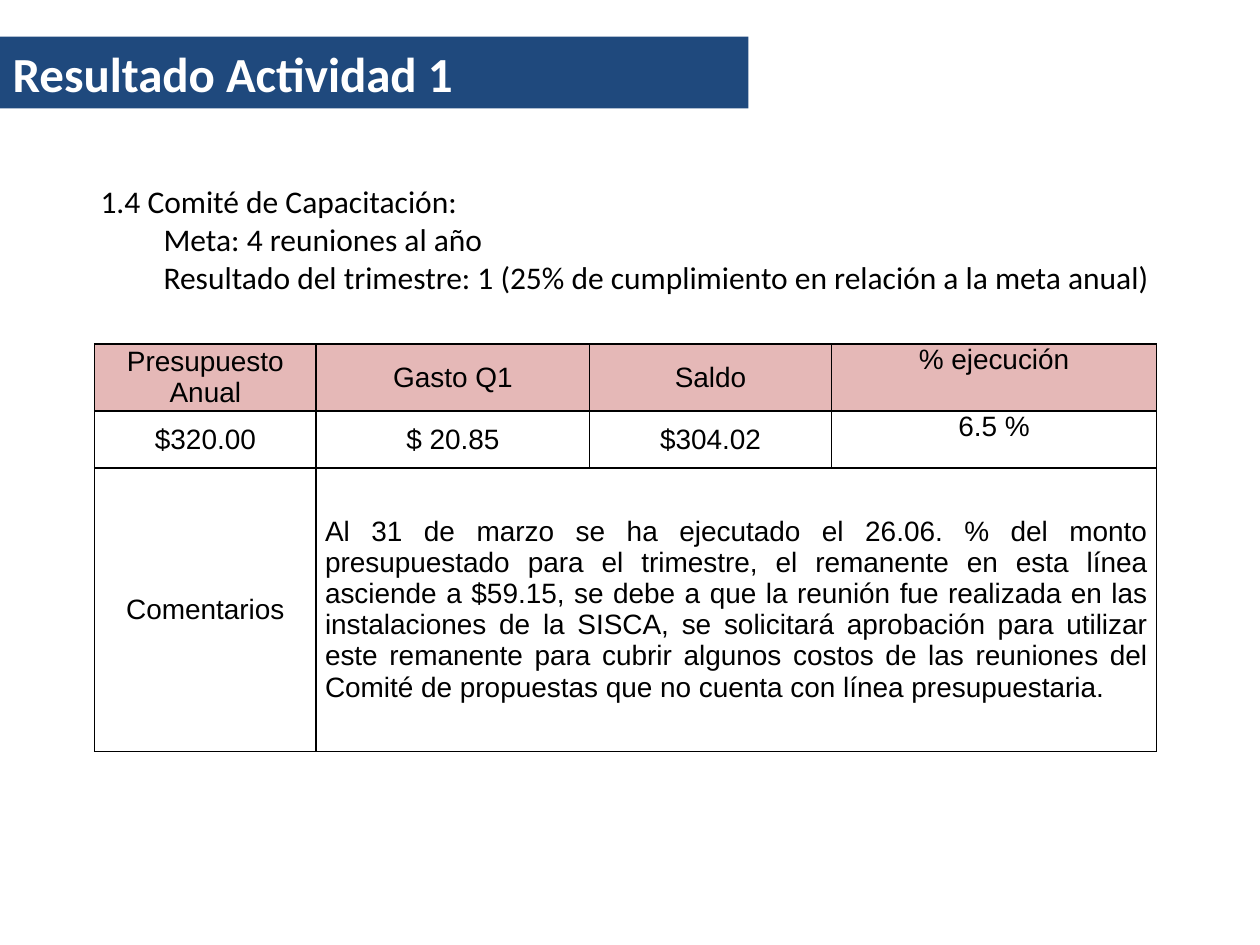
from lxml.etree import SubElement
from pptx import Presentation
from pptx.dml.color import RGBColor
from pptx.enum.text import MSO_ANCHOR, MSO_AUTO_SIZE, PP_ALIGN
from pptx.oxml.ns import qn
from pptx.util import Inches, Pt

COLORS = {"banner": "1F497D", "header": "E5B8B7", "ink": "000000", "paper": "FFFFFF"}
GRID_COLUMNS, GRID_ROWS = 100, 75
COLUMN_WIDTHS = [17.6, 21.7, 19.2, 25.8]
ROW_HEIGHTS = [5.3, 4.5, 22.5]

GOAL_LINES = [
    ("1.4 Comité de Capacitación:", 0.5),
    ("Meta: 4 reuniones al año", 1),
    ("Resultado del trimestre: 1 (25% de cumplimiento en relación a la meta anual)", 1),
]
COMMENT = (
    "Al 31 de marzo se ha ejecutado el 26.06. % del monto presupuestado para el trimestre, "
    "el remanente en esta línea asciende a $59.15, se debe a que la reunión fue realizada en "
    "las instalaciones de la SISCA, se solicitará aprobación para utilizar este remanente para "
    "cubrir algunos costos de las reuniones del Comité de propuestas que no cuenta con línea "
    "presupuestaria."
)
BUDGET = [
    ["Presupuesto Anual", "Gasto Q1", "Saldo", "% ejecución"],
    ["$320.00", "$ 20.85", "$304.02", "6.5 %"],
    ["Comentarios", COMMENT, "", ""],
]


def write(paragraph, text, font="Calibri", size=18, color="ink", bold=False,
          align=PP_ALIGN.LEFT, margin=0):
    paragraph.alignment = align
    if margin:
        properties = paragraph._p.get_or_add_pPr()
        properties.set("marL", str(Inches(margin)))
        properties.set("indent", "0")
    run = paragraph.add_run()
    run.text = text
    run.font.name = font
    run.font.size = Pt(size)
    run.font.bold = bold
    run.font.color.rgb = RGBColor.from_string(COLORS[color])


class SlideBuilder:
    def __init__(self, presentation):
        self.column = presentation.slide_width / GRID_COLUMNS
        self.row = presentation.slide_height / GRID_ROWS
        self.slide = presentation.slides.add_slide(presentation.slide_layouts[5])

    def place(self, left, top, width, height):
        return (round(left * self.column), round(top * self.row),
                round(width * self.column), round(height * self.row))

    def banner(self, text, *area):
        title = self.slide.shapes.title
        title.left, title.top, title.width, title.height = self.place(*area)
        title.fill.solid()
        title.fill.fore_color.rgb = RGBColor.from_string(COLORS["banner"])
        frame = title.text_frame
        frame.auto_size = MSO_AUTO_SIZE.NONE
        frame.vertical_anchor = MSO_ANCHOR.MIDDLE
        write(frame.paragraphs[0], text, size=28, color="paper", bold=True)

    def lines(self, entries, *area):
        frame = self.slide.shapes.add_textbox(*self.place(*area)).text_frame
        frame.word_wrap = True
        frame.vertical_anchor = MSO_ANCHOR.MIDDLE
        for number, (text, margin) in enumerate(entries):
            paragraph = frame.add_paragraph() if number else frame.paragraphs[0]
            write(paragraph, text, margin=margin)

    def border(self, cell):
        properties = cell._tc.get_or_add_tcPr()
        for side in ("lnL", "lnR", "lnT", "lnB"):
            edge = SubElement(properties, qn(f"a:{side}"), w=str(Pt(1)))
            paint = SubElement(edge, qn("a:solidFill"))
            SubElement(paint, qn("a:srgbClr"), val=COLORS["ink"])

    def table(self, values, left, top):
        area = self.place(left, top, sum(COLUMN_WIDTHS), sum(ROW_HEIGHTS))
        table = self.slide.shapes.add_table(len(values), len(values[0]), *area).table
        table.first_row = table.horz_banding = False
        for column, width in zip(table.columns, COLUMN_WIDTHS):
            column.width = round(width * self.column)
        for row, height in zip(table.rows, ROW_HEIGHTS):
            row.height = round(height * self.row)
        table.cell(2, 1).merge(table.cell(2, 3))
        for r, texts in enumerate(values):
            for c, text in enumerate(texts):
                self.cell(table.cell(r, c), text, header=r == 0, top=c == 3)

    def cell(self, cell, text, header, top):
        self.border(cell)
        if header:
            cell.fill.solid()
            cell.fill.fore_color.rgb = RGBColor.from_string(COLORS["header"])
        else:
            cell.fill.background()
        cell.margin_left = cell.margin_right = Inches(0.07)
        cell.margin_top = cell.margin_bottom = 0
        cell.vertical_anchor = MSO_ANCHOR.TOP if top else MSO_ANCHOR.MIDDLE
        if text:
            align = PP_ALIGN.JUSTIFY if text == COMMENT else PP_ALIGN.CENTER
            write(cell.text_frame.paragraphs[0], text, font="Arial", size=16, align=align)


def main():
    presentation = Presentation()
    presentation.slide_width, presentation.slide_height = Inches(10), Inches(7.5)
    builder = SlideBuilder(presentation)
    builder.banner("Resultado Actividad 1", 0, 2.9, 59.4, 5.7)
    builder.lines(GOAL_LINES, 2, 13.9, 93.7, 10.1)
    builder.table(BUDGET, 7.5, 27.3)
    presentation.save("out.pptx")


if __name__ == "__main__":
    main()
